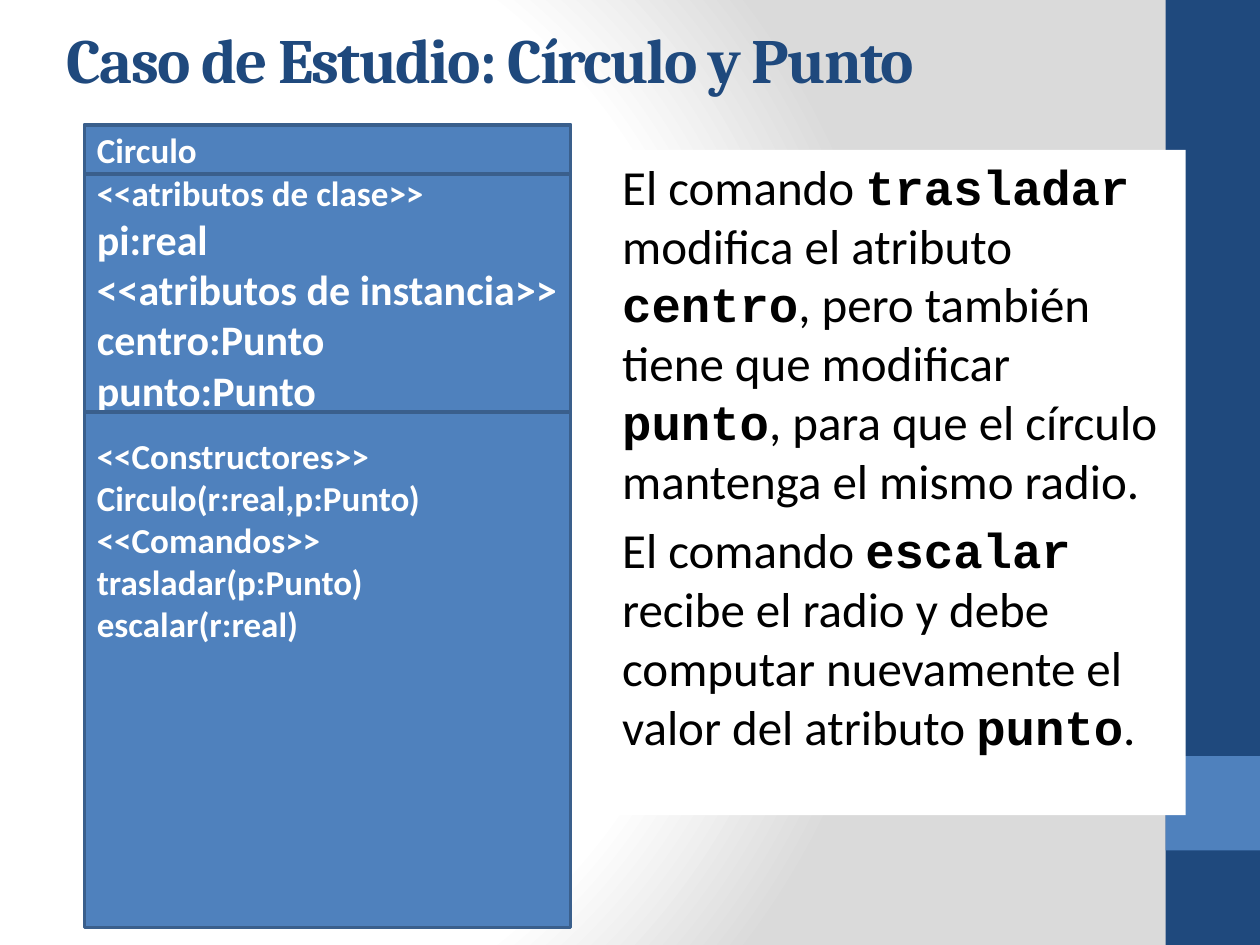
from lxml import etree
from pptx import Presentation
from pptx.dml.color import RGBColor
from pptx.enum.shapes import MSO_SHAPE
from pptx.enum.text import MSO_ANCHOR, PP_ALIGN
from pptx.util import Inches, Pt

RECT = MSO_SHAPE.RECTANGLE
TOP, MIDDLE, BOTTOM = MSO_ANCHOR.TOP, MSO_ANCHOR.MIDDLE, MSO_ANCHOR.BOTTOM
LEFT = PP_ALIGN.LEFT

# Content
COLORS = {"navy": "1F497D", "blue": "4F81BD", "edge": "3A5F8C",
          "white": "FFFFFF", "black": "000000", "gray": "DADADA"}
BODY, CODE, HEAD = "Calibri", "Courier New", "Cambria"
TITLE = "Caso de Estudio: Círculo y Punto"

# Class diagram: height, anchor, top inset, lines as (text, size)
CLASS = [
    (0.39, MIDDLE, 0.05, [("Circulo", 20)]),
    (1.89, MIDDLE, 0.05, [("<<atributos de clase>>", 20), ("pi:real", 24),
                          ("<<atributos de instancia>>", 24),
                          ("centro:Punto", 24), ("punto:Punto", 24)]),
    (4.09, TOP, 0.18, [("<<Constructores>>", 20),
                       ("Circulo(r:real,p:Punto)", 20),
                       ("<<Comandos>>", 20),
                       ("trasladar(p:Punto)", 20),
                       ("escalar(r:real)", 20)]),
]

# Odd pieces are code
NOTES = [
    ["El comando ", "trasladar", " modifica el atributo ", "centro",
     ", pero también tiene que modificar ", "punto",
     ", para que el círculo mantenga el mismo radio."],
    ["El comando ", "escalar",
     " recibe el radio y debe computar nuevamente el valor del atributo ",
     "punto", "."],
]


def color(name):
    return RGBColor.from_string(COLORS[name])


def style(run, size, font, tint, bold):
    run.font.size, run.font.name, run.font.bold = Pt(size), font, bold
    run.font.color.rgb = color(tint)


def box(slide, at, fill, edge=None):
    shape = slide.shapes.add_shape(RECT, *map(Inches, at))
    shape.shadow.inherit = False
    shape.fill.solid()
    shape.fill.fore_color.rgb = color(fill)
    if edge:
        shape.line.color.rgb = color(edge)
        shape.line.width = Pt(2)
    else:
        shape.line.fill.background()
    return shape


def backdrop(slide):
    stops = "".join(
        f'<a:gs pos="{pos * 1000}"><a:srgbClr val="{COLORS[name]}"/></a:gs>'
        for pos, name in [(0, "white"), (75, "white"), (100, "gray")])
    bg = etree.fromstring(
        '<p:bg xmlns:p="http://schemas.openxmlformats.org/presentationml/2006/main"'
        ' xmlns:a="http://schemas.openxmlformats.org/drawingml/2006/main">'
        f'<p:bgPr><a:gradFill rotWithShape="1"><a:gsLst>{stops}</a:gsLst>'
        '<a:path path="circle">'
        '<a:fillToRect l="20000" t="50000" r="100000" b="50000"/></a:path>'
        '</a:gradFill><a:effectLst/></p:bgPr></p:bg>')
    slide.element.cSld.insert(0, bg)


def heading(slide):
    title = slide.shapes.title
    title.left, title.top = Inches(0.43), Inches(0.05)
    title.width, title.height = Inches(8.25), Inches(0.76)
    frame = title.text_frame
    frame.text = TITLE
    frame.vertical_anchor = BOTTOM
    para = frame.paragraphs[0]
    para.alignment = LEFT
    run = para.runs[0]
    style(run, 36, HEAD, "navy", True)
    run._r.get_or_add_rPr().set("spc", "-100")


def diagram(slide):
    top = 0.99
    for high, anchor, inset, lines in CLASS:
        frame = box(slide, (0.67, top, 3.86, high), "blue", "edge").text_frame
        frame.word_wrap = True
        frame.vertical_anchor = anchor
        frame.margin_top = Inches(inset)
        frame.text = "\n".join(text for text, size in lines)
        for para, (text, size) in zip(frame.paragraphs, lines):
            para.alignment = LEFT
            style(para.runs[0], size, BODY, "white", True)
        top += high


def notes(slide):
    frame = box(slide, (4.84, 1.19, 4.57, 5.28), "white").text_frame
    frame.word_wrap = True
    frame.vertical_anchor = TOP
    for i, parts in enumerate(NOTES):
        para = frame.add_paragraph() if i else frame.paragraphs[0]
        para.alignment = LEFT
        para.space_before = Pt(6)
        for j, text in enumerate(parts):
            code = j % 2 == 1
            run = para.add_run()
            run.text = text
            style(run, 28, CODE if code else BODY, "black", code)


def main():
    deck = Presentation()
    deck.slide_width, deck.slide_height = Inches(10), Inches(7.5)
    slide = deck.slides.add_slide(deck.slide_layouts[5])
    backdrop(slide)
    # Side band
    box(slide, (9.25, 0, 0.75, 7.5), "navy")
    box(slide, (9.25, 6, 0.75, 0.75), "blue")
    heading(slide)
    diagram(slide)
    notes(slide)
    deck.save("out.pptx")


if __name__ == "__main__":
    main()
